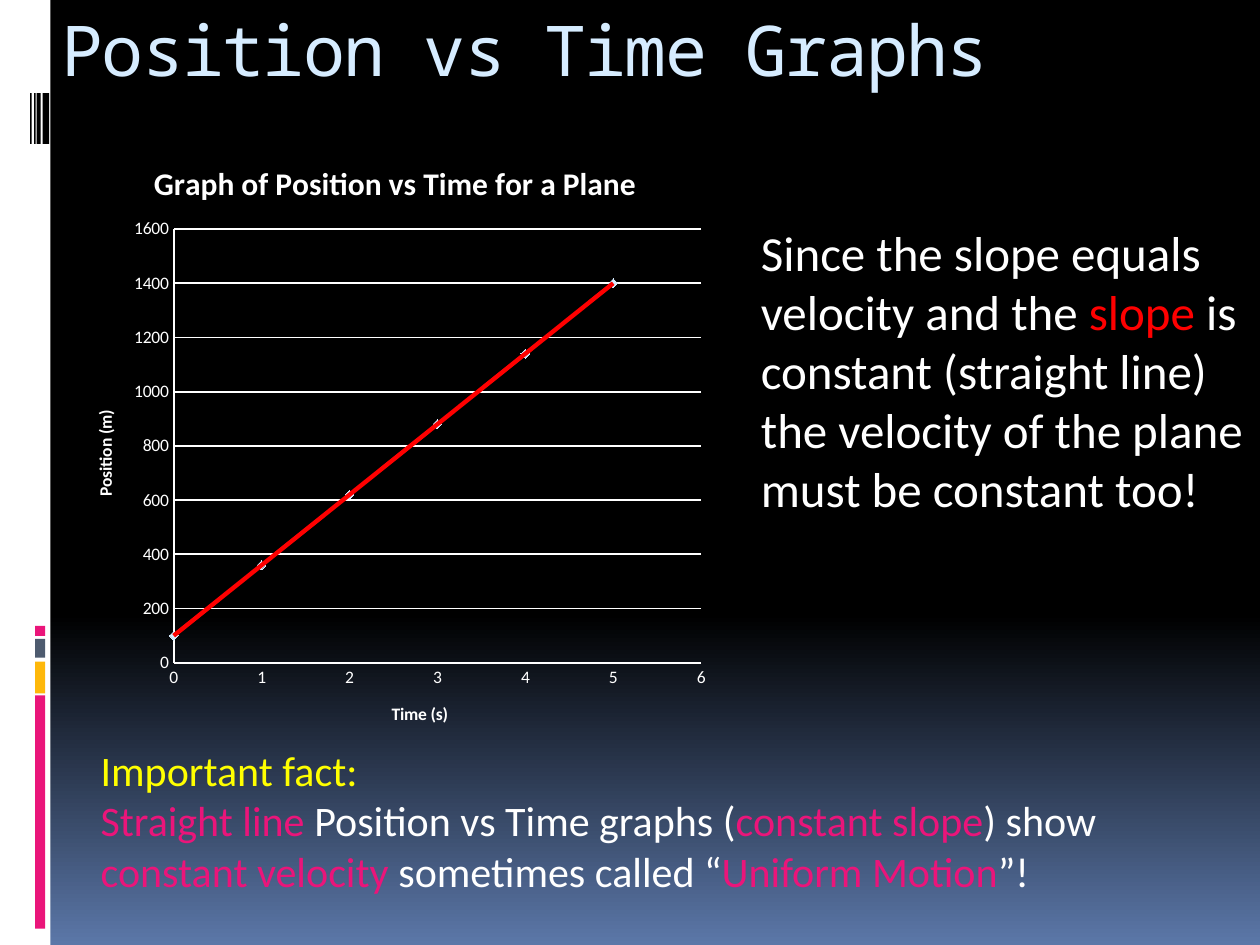
from copy import deepcopy
from typing import NamedTuple

from lxml import etree
from pptx import Presentation
from pptx import util as u
from pptx.chart.data import XyChartData
from pptx.dml.color import RGBColor
from pptx.enum import chart as ch, shapes, text
from pptx.oxml import parse_xml
from pptx.oxml.ns import nsdecls, qn

WHITE = RGBColor(0xFF, 0xFF, 0xFF)
BLACK = RGBColor(0, 0, 0)
PINK = RGBColor(0xEA, 0x15, 0x7A)
AMBER = RGBColor(0xFE, 0xB8, 0x0A)
SLATE = RGBColor(0x4E, 0x5B, 0x6F)
BLUE = RGBColor(0x5B, 0x77, 0xA8)
PALE_BLUE = RGBColor(0xD6, 0xEC, 0xFF)
RED = RGBColor(0xFF, 0, 0)
YELLOW = RGBColor(0xFF, 0xFF, 0)
BODY_FONT = "Calibri"
TITLE_FONT = "Noto Sans Mono"


class Box(NamedTuple):
    left: float
    top: float
    width: float
    height: float

    def cm(self) -> list:
        return [u.Cm(v) for v in self]


class Bar(NamedTuple):
    box: Box
    color: RGBColor


class Span(NamedTuple):
    text: str
    color: RGBColor = WHITE


def style_font(font, color: RGBColor, **values) -> None:
    for name, value in values.items():
        setattr(font, name, value)
    font.color.rgb = color


def draw_bar(s, bar: Bar) -> None:
    sp = s.shapes.add_shape(shapes.MSO_SHAPE.RECTANGLE, *bar.box.cm())
    sp.shadow.inherit = False
    sp.fill.solid()
    sp.fill.fore_color.rgb = bar.color
    sp.line.fill.background()


def draw_text(s, box: Box, size: int, paragraphs: list[list[Span]]) -> None:
    tf = s.shapes.add_textbox(*box.cm()).text_frame
    tf.word_wrap = True
    tf.auto_size = text.MSO_AUTO_SIZE.SHAPE_TO_FIT_TEXT
    for i, spans in enumerate(paragraphs):
        p = tf.paragraphs[0] if i == 0 else tf.add_paragraph()
        for span in spans:
            r = p.add_run()
            r.text = span.text
            style_font(r.font, span.color, name=BODY_FONT, size=u.Pt(size))


def set_chart_title(owner, words: str, size: int) -> None:
    tf = (owner.chart_title if hasattr(owner, "chart_title") else owner.axis_title).text_frame
    tf.text = words
    style_font(tf.paragraphs[0].runs[0].font, WHITE, name=BODY_FONT, size=u.Pt(size), bold=True)


def format_axis(axis, words: str, top: float, step: float, grid: bool) -> None:
    values = {
        "minimum_scale": 0, "maximum_scale": top, "major_unit": step,
        "has_major_gridlines": grid,
        "major_tick_mark": ch.XL_TICK_MARK.NONE,
        "minor_tick_mark": ch.XL_TICK_MARK.NONE,
    }
    for name, value in values.items():
        setattr(axis, name, value)
    lines = [axis.format.line] + ([axis.major_gridlines.format.line] if grid else [])
    for line in lines:
        line.color.rgb = WHITE
        line.width = u.Pt(1)
    set_chart_title(axis, words, 10)


def draw_chart(s, box: Box) -> None:
    data = XyChartData()
    points = data.add_series("Series 1")
    for time in range(6):
        points.add_data_point(time, 100 + 260 * time)
    chart = s.shapes.add_chart(ch.XL_CHART_TYPE.XY_SCATTER, *box.cm(), data).chart
    chart.has_legend = False
    style_font(chart.font, WHITE, name=BODY_FONT, size=u.Pt(10))
    set_chart_title(chart, "Graph of Position vs Time for a Plane", 18)
    format_axis(chart.category_axis, "Time (s)", 6, 1, False)
    format_axis(chart.value_axis, "Position (m)", 1600, 200, True)

    # Diamond markers without a joining line
    plot = chart.plots[0]
    plot.vary_by_categories = False
    series = plot.series[0]
    series.smooth = False
    series.format.line.fill.background()
    series.marker.style = ch.XL_MARKER_STYLE.DIAMOND
    series.marker.size = 5
    series.marker.format.fill.solid()
    series.marker.format.fill.fore_color.rgb = PALE_BLUE
    series.marker.format.line.color.rgb = BLUE

    # Linear trend line
    trend = parse_xml(
        f'<c:trendline {nsdecls("c", "a")}><c:spPr><a:ln w="{u.Pt(2.5)}"><a:solidFill>'
        f'<a:srgbClr val="{RED}"/></a:solidFill></a:ln></c:spPr>'
        '<c:trendlineType val="linear"/><c:dispRSqr val="0"/><c:dispEq val="0"/></c:trendline>')
    series._element.find(qn("c:xVal")).addprevious(trend)

    # Fixed plot area inside the chart
    area = chart._chartSpace.chart.plotArea
    for old in area.findall(qn("c:layout")):
        area.remove(old)
    layout = parse_xml(f'<c:layout {nsdecls("c")}><c:manualLayout/></c:layout>')
    settings = {"layoutTarget": "inner", "xMode": "edge", "yMode": "edge",
                "x": 0.16, "y": 0.15, "w": 0.81, "h": 0.71}
    for name, value in settings.items():
        etree.SubElement(layout[0], qn(f"c:{name}")).set("val", str(value))
    area.insert(0, layout)


def fill_background(s) -> None:
    fill = s.background.fill
    fill.gradient()
    fill.gradient_angle = 270
    first, last = fill.gradient_stops
    first.color.rgb, last.color.rgb = BLACK, BLUE
    first.position, last.position = 0, 1
    middle = deepcopy(first._gs)
    middle.set("pos", "65000")
    first._gs.addnext(middle)


SIDE_BARS = [
    Bar(Box(0, 0, 1.02, 19.05), WHITE),
    *[Bar(Box(0.71, top, 0.2, height), color) for top, height, color in [
        (14.02, 4.7, PINK), (13.34, 0.64, AMBER), (12.88, 0.38, SLATE), (12.62, 0.2, PINK)]],
    *[Bar(Box(left, 1.88, width, 1.02), BLACK) for left, width in [
        (0.86, 0.13), (0.74, 0.08), (0.69, 0.03), (0.61, 0.03)]],
]


def main() -> None:
    prs = Presentation()
    prs.slide_width, prs.slide_height = u.Cm(25.4), u.Cm(19.05)
    s = prs.slides.add_slide(prs.slide_layouts[5])
    fill_background(s)
    for bar in SIDE_BARS:
        draw_bar(s, bar)

    # Title
    title = s.shapes.title
    title.left, title.top, title.width, title.height = Box(0.99, 0, 21.59, 2.54).cm()
    tf = title.text_frame
    tf.vertical_anchor = text.MSO_ANCHOR.TOP
    p = tf.paragraphs[0]
    p.alignment = text.PP_ALIGN.LEFT
    r = p.add_run()
    r.text = "Position vs Time Graphs"
    style_font(r.font, PALE_BLUE, name=TITLE_FONT, size=u.Pt(40))
    r.font._element.set("spc", "-100")

    # Graph and explanations
    draw_chart(s, Box(1.4, 2.77, 13.13, 12.32))
    draw_text(s, Box(15.09, 4.37, 10.31, 6.25), 28, [[
        Span("Since the slope equals velocity and the "), Span("slope", RED),
        Span(" is constant (straight line) the velocity of the plane must be constant too!")]])
    draw_text(s, Box(1.78, 14.88, 22.63, 3.33), 24, [
        [Span("Important fact:", YELLOW)],
        [Span("Straight line ", PINK), Span("Position vs Time graphs ("),
         Span("constant slope", PINK), Span(") show "),
         Span("constant velocity ", PINK), Span("sometimes called “"),
         Span("Uniform Motion", PINK), Span("”!")]])
    prs.save("out.pptx")


if __name__ == "__main__":
    main()
